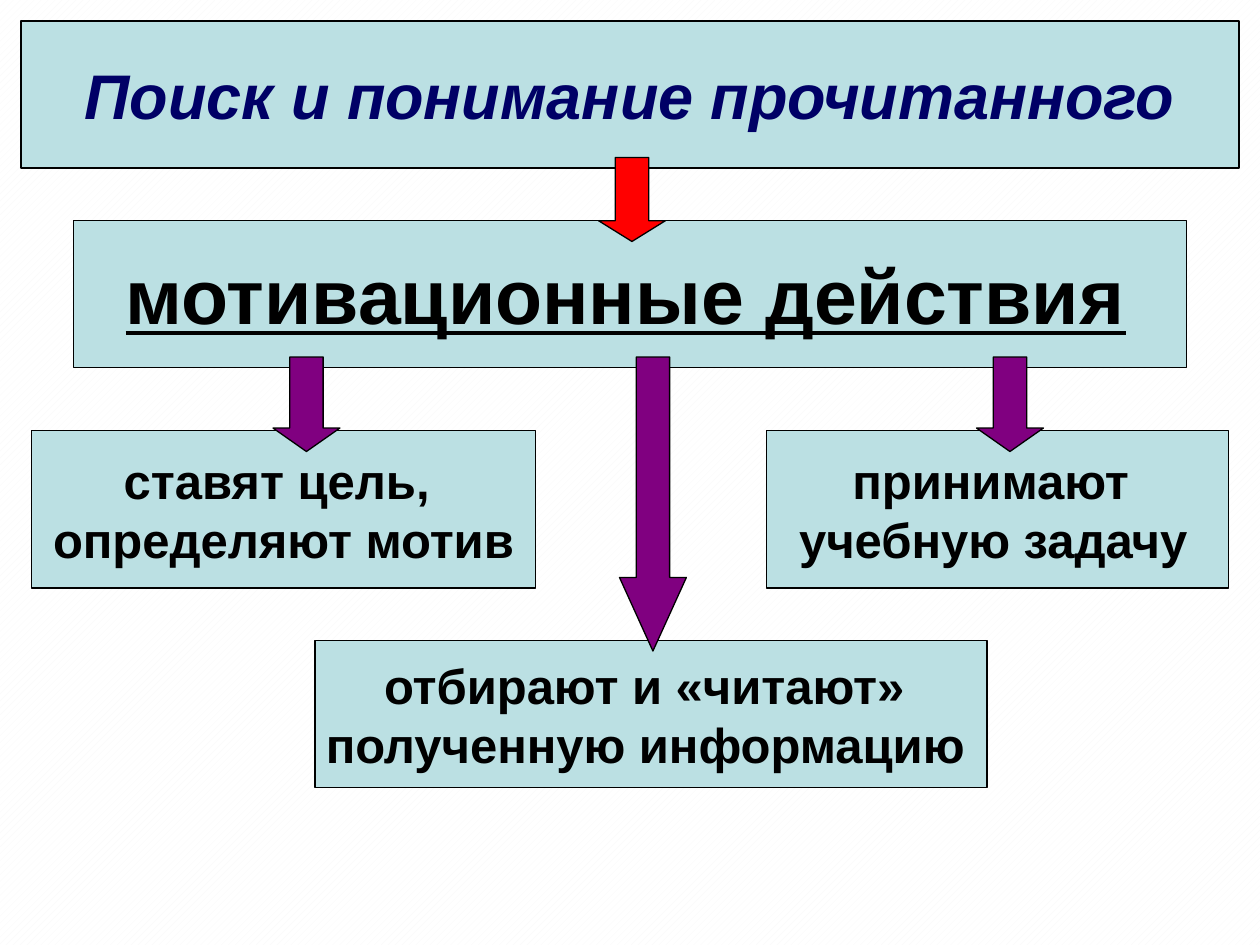
"""Build a slide on motivational actions in reading comprehension."""
from pptx import Presentation
from pptx.dml.color import RGBColor
from pptx.enum.dml import MSO_PATTERN
from pptx.enum.shapes import MSO_SHAPE
from pptx.enum.text import MSO_ANCHOR, PP_ALIGN
from pptx.util import Pt

RECTANGLE, DOWN_ARROW = MSO_SHAPE.RECTANGLE, MSO_SHAPE.DOWN_ARROW
DIAGONAL = MSO_PATTERN.WIDE_UPWARD_DIAGONAL
MIDDLE, CENTER = MSO_ANCHOR.MIDDLE, PP_ALIGN.CENTER
WHITE = RGBColor(0xFF, 0xFF, 0xFF)
HATCH = RGBColor(0xF8, 0xF8, 0xF8)
PALE_TEAL = RGBColor(0xBB, 0xE0, 0xE3)
NAVY = RGBColor(0x00, 0x00, 0x66)
BLACK = RGBColor(0x00, 0x00, 0x00)
RED = RGBColor(0xFF, 0x00, 0x00)
PURPLE = RGBColor(0x80, 0x00, 0x80)

prs = Presentation()
prs.slide_width, prs.slide_height = Pt(720), Pt(540)
slide = prs.slides.add_slide(prs.slide_layouts[6])
backdrop = slide.background.fill
backdrop.patterned()
backdrop.pattern = DIAGONAL
backdrop.fore_color.rgb = HATCH
backdrop.back_color.rgb = WHITE


def add_outlined(kind, left, top, width, height, color):
    shape = slide.shapes.add_shape(kind, Pt(left), Pt(top), Pt(width), Pt(height))
    shape.shadow.inherit = False
    shape.fill.solid()
    shape.fill.fore_color.rgb = color
    shape.line.color.rgb = BLACK
    shape.line.width = Pt(0.75)
    return shape


# left, top, width, height, text, size, color, italic, underline, size of closing space
statements = [
    (12, 12, 696, 84, "Поиск и понимание прочитанного", 36, NAVY, True, False, None),
    (42, 126, 636, 84, "мотивационные действия", 44, BLACK, False, True, 18),
    (18, 246, 288, 90, "ставят цель, \nопределяют мотив", 28, BLACK, False, False, None),
    (438, 246, 264, 90, "принимают \nучебную задачу", 28, BLACK, False, False, 18),
    (180, 366, 384, 84, "отбирают и «читают» \nполученную информацию", 28, BLACK, False, False, 24),
]
for left, top, width, height, text, size, color, italic, underline, space_size in statements:
    frame = add_outlined(RECTANGLE, left, top, width, height, PALE_TEAL).text_frame
    frame.word_wrap = False
    frame.vertical_anchor = MIDDLE
    frame.text = text
    for paragraph in frame.paragraphs:
        paragraph.alignment = CENTER
        for run in paragraph.runs:
            run.font.name = "Arial"
            run.font.size = Pt(size)
            run.font.bold = True
            run.font.italic = italic
            run.font.underline = underline
            run.font.color.rgb = color
    if space_size:
        closing_space = frame.paragraphs[-1].add_run()
        closing_space.text = " "
        closing_space.font.name = "Arial"
        closing_space.font.size = Pt(space_size)

ARROW_WIDTH = 38.25
for left, top, height, head_ratio, color in [
    (342, 90, 48, 0.31, RED),
    (156, 204, 54, 0.35, PURPLE),
    (558, 204, 54, 0.35, PURPLE),
    (354, 204, 168, 1.1, PURPLE),
]:
    arrow = add_outlined(DOWN_ARROW, left, top, ARROW_WIDTH, height, color)
    arrow.adjustments[0] = 0.5
    arrow.adjustments[1] = head_ratio

prs.save("out.pptx")
